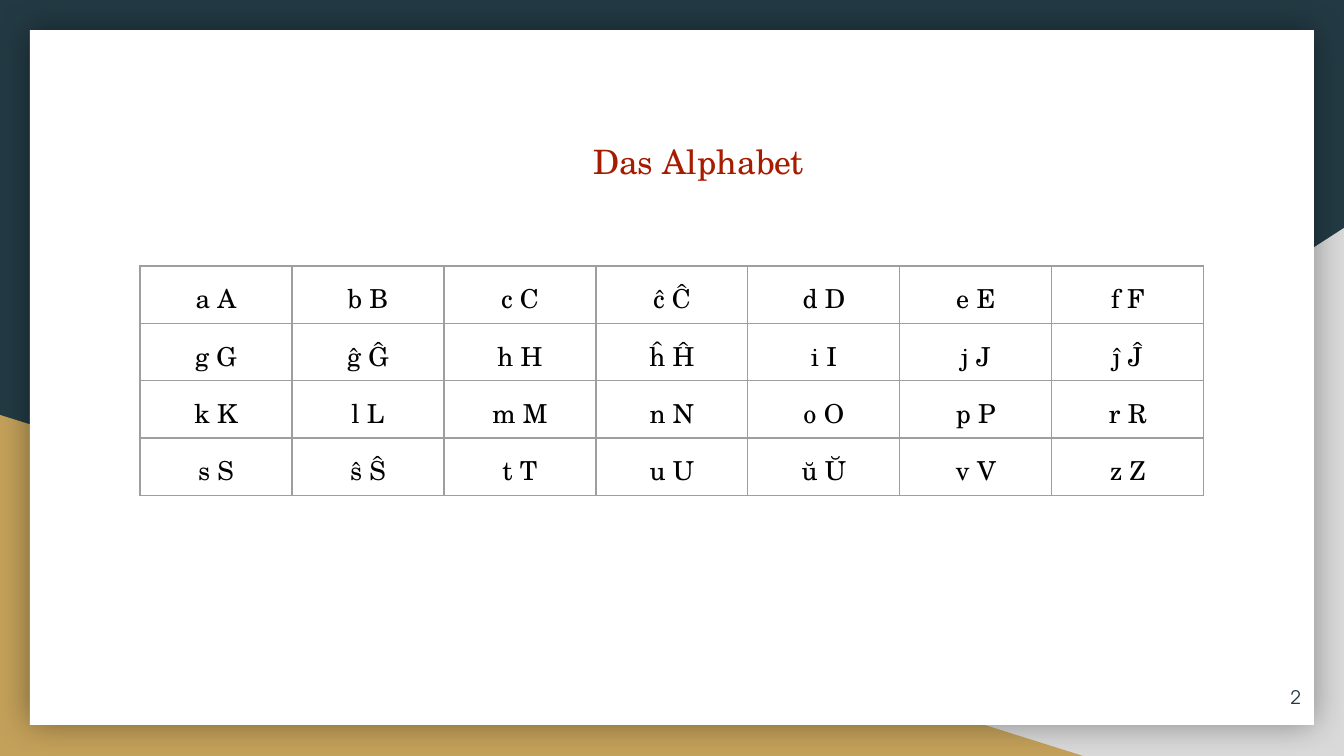
import dataclasses

import lxml.etree
import pptx
import pptx.dml.color
import pptx.enum.shapes
import pptx.enum.text
import pptx.oxml
import pptx.oxml.ns
import pptx.util

PX = 914400 / 134.4
INSET = 13
ALPHABET = ["abcĉdef", "gĝhĥijĵ", "klmnopr", "sŝtuŭvz"]
ALIGN = pptx.enum.text.PP_ALIGN
ANCHOR = pptx.enum.text.MSO_ANCHOR
PRESET = pptx.enum.shapes.MSO_SHAPE


@dataclasses.dataclass(frozen=True)
class Theme:
    night: str = "233A44"
    gold: str = "C4A15A"
    silver: str = "D9D9D9"
    paper: str = "FFFFFF"
    heading: str = "A61C00"
    ink: str = "000000"
    grid: str = "9E9E9E"
    serif: str = "TeX Gyre Schola"
    sans: str = "TeX Gyre Adventor"
    heading_size: int = 18
    letter_size: int = 14
    number_size: int = 10


THEME = Theme()


def px(length):
    return pptx.util.Emu(round(length * PX))


def rgb(value):
    return pptx.dml.color.RGBColor.from_string(value)


def add_child(parent, tag, **attributes):
    return lxml.etree.SubElement(parent, pptx.oxml.ns.qn(tag), attributes)


def write(frame, text, *, size, color, font=THEME.serif, align=ALIGN.CENTER,
          spacing=None, indent=0):
    paragraph = frame.paragraphs[0]
    paragraph.alignment = align
    if spacing:
        paragraph.line_spacing = spacing
    if indent:
        paragraph._p.get_or_add_pPr().set("indent", str(px(indent)))
    run = paragraph.add_run()
    run.text = text
    run.font.name = font
    run.font.size = pptx.util.Pt(size)
    run.font.color.rgb = rgb(color)


def add_panel(slide, preset, box, color, flipped=False):
    panel = slide.shapes.add_shape(preset, *map(px, box))
    panel.shadow.inherit = False
    panel.fill.solid()
    panel.fill.fore_color.rgb = rgb(color)
    panel.line.fill.background()
    if flipped:
        panel._element.spPr.xfrm.set("flipH", "1")
    return panel


def add_glow(panel):
    effects = panel._element.spPr.find(pptx.oxml.ns.qn("a:effectLst"))
    glow = add_child(effects, "a:outerShdw", blurRad=str(pptx.util.Pt(18)),
                     dist="0", dir="0", algn="ctr", rotWithShape="0")
    shade = add_child(glow, "a:srgbClr", val=THEME.ink)
    add_child(shade, "a:alpha", val="40000")


def set_insets(holder):
    for side in ("left", "right", "top", "bottom"):
        setattr(holder, f"margin_{side}", px(INSET))


def add_text(slide, box, text, anchor=ANCHOR.TOP, **text_format):
    frame = slide.shapes.add_textbox(*map(px, box)).text_frame
    frame.word_wrap = True
    frame.vertical_anchor = anchor
    set_insets(frame)
    write(frame, text, **text_format)


def set_borders(cell):
    properties = cell._tc.get_or_add_tcPr()
    for position, side in enumerate("LRTB"):
        border = add_child(properties, f"a:ln{side}", w=str(pptx.util.Pt(0.75)))
        stroke = add_child(border, "a:solidFill")
        add_child(stroke, "a:srgbClr", val=THEME.grid)
        properties.insert(position, border)


def add_alphabet(slide, left, top, column_width, row_height):
    row_count, column_count = len(ALPHABET), len(ALPHABET[0])
    alphabet = slide.shapes.add_table(
        row_count, column_count, px(left), px(top),
        px(column_width * column_count), px(row_height * row_count)).table
    alphabet.first_row = False
    alphabet.horz_banding = False
    for row, letters in enumerate(ALPHABET):
        for column, letter in enumerate(letters):
            cell = alphabet.cell(row, column)
            cell.fill.background()
            set_borders(cell)
            set_insets(cell)
            write(cell.text_frame, f"{letter} {letter.upper()}",
                  size=THEME.letter_size, color=THEME.ink)


def main():
    deck = pptx.Presentation()
    deck.slide_width, deck.slide_height = px(1344), px(756)
    slide = deck.slides.add_slide(deck.slide_layouts[6])
    slide.background.fill.solid()
    slide.background.fill.fore_color.rgb = rgb(THEME.night)

    add_panel(slide, PRESET.RIGHT_TRIANGLE, (527, 228, 817, 528), THEME.silver, flipped=True)
    add_panel(slide, PRESET.RIGHT_TRIANGLE, (0, 415, 1083, 341), THEME.gold)
    add_glow(add_panel(slide, PRESET.RECTANGLE, (30, 30, 1284, 695), THEME.paper))

    add_text(slide, (121, 120, 1103, 528), "Das Alphabet", size=THEME.heading_size,
             color=THEME.heading, spacing=1.2, indent=52)
    add_text(slide, (1234, 668, 80, 58), "2", anchor=ANCHOR.MIDDLE, size=THEME.number_size,
             color=THEME.night, font=THEME.sans, align=ALIGN.RIGHT)
    add_alphabet(slide, left=140, top=266, column_width=152, row_height=57)
    deck.save("out.pptx")


if __name__ == "__main__":
    main()
